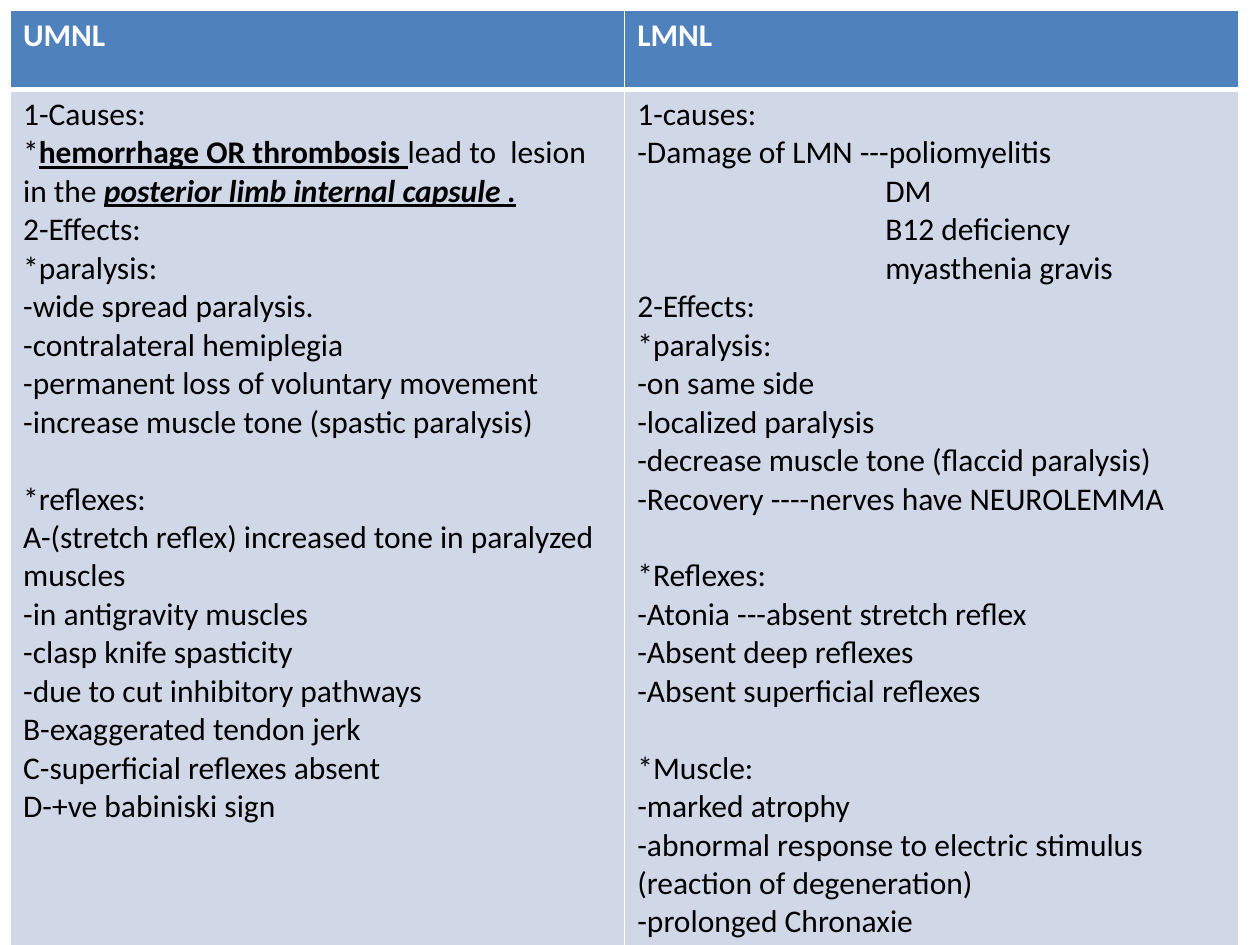
import dataclasses

import lxml.etree
import pptx
import pptx.dml.color
import pptx.oxml.ns
import pptx.util

Pt = pptx.util.Pt


@dataclasses.dataclass(frozen=True)
class Theme:
    font: str = "Calibri"
    size: float = 18
    line_height: float = 22
    header_fill: str = "4F81BD"
    header_text: str = "FFFFFF"
    body_fill: str = "D0D8E8"
    body_text: str = "000000"
    rule: str = "FFFFFF"
    thin: float = 1
    thick: float = 3


@dataclasses.dataclass
class Line:
    runs: list
    space_before: float = 0
    indent: float = 0


THEME = Theme()
PLAIN = {"bold": False}
STRONG = {"bold": True, "underline": True}
STRONG_ITALIC = {**STRONG, "italic": True}


def section(text):
    """A heading set off from the lines above by one line of space."""
    return Line([(text, PLAIN)], space_before=THEME.line_height)


def disease(text):
    """A cause aligned under the first one named."""
    return Line([(text, PLAIN)], indent=141.7)


# Content
UMNL = [
    "1-Causes:",
    Line([
        ("*", PLAIN),
        ("hemorrhage OR thrombosis ", STRONG),
        ("lead to  lesion in the ", PLAIN),
        ("posterior limb internal capsule .", STRONG_ITALIC),
    ]),
    "2-Effects:",
    "*paralysis:",
    "-wide spread paralysis.",
    "-contralateral hemiplegia",
    "-permanent loss of voluntary movement",
    "-increase muscle tone (spastic paralysis)",
    section("*reflexes:"),
    "A-(stretch reflex) increased tone in paralyzed muscles",
    "-in antigravity muscles",
    "-clasp knife spasticity",
    "-due to cut inhibitory pathways",
    "B-exaggerated tendon jerk",
    "C-superficial reflexes absent",
    "D-+ve babiniski sign",
]

LMNL = [
    "1-causes:",
    "-Damage of LMN ---poliomyelitis",
    disease("DM"),
    disease("B12 deficiency"),
    disease("myasthenia gravis"),
    "2-Effects:",
    "*paralysis:",
    "-on same side",
    "-localized paralysis",
    "-decrease muscle tone (flaccid paralysis)",
    "-Recovery ----nerves have NEUROLEMMA",
    section("*Reflexes:"),
    "-Atonia ---absent stretch reflex",
    "-Absent deep reflexes",
    "-Absent superficial reflexes",
    section("*Muscle:"),
    "-marked atrophy",
    "-abnormal response to electric stimulus",
    "(reaction of degeneration)",
    "-prolonged Chronaxie",
]


class SlideBuilder:
    def __init__(self, slide, theme):
        self.slide = slide
        self.theme = theme

    def table(self, left, top, column_widths, row_heights):
        grid = self.slide.shapes.add_table(
            len(row_heights), len(column_widths), Pt(left), Pt(top),
            Pt(sum(column_widths)), Pt(sum(row_heights))).table
        grid.horz_banding = False
        for column, width in zip(grid.columns, column_widths):
            column.width = Pt(width)
        for row, height in zip(grid.rows, row_heights):
            row.height = Pt(height)
        return grid

    def cell(self, cell, lines, fill, color, top, bottom):
        cell.fill.solid()
        cell.fill.fore_color.rgb = pptx.dml.color.RGBColor.from_string(fill)
        self.borders(cell, {"L": self.theme.thin, "R": self.theme.thin,
                            "T": top, "B": bottom})
        for number, line in enumerate(lines):
            if isinstance(line, str):
                line = Line([(line, PLAIN)])
            frame = cell.text_frame
            paragraph = frame.add_paragraph() if number else frame.paragraphs[0]
            self.paragraph(paragraph, line, color)

    def paragraph(self, paragraph, line, color):
        if line.space_before:
            paragraph.space_before = Pt(line.space_before)
        if line.indent:
            paragraph._p.get_or_add_pPr().set("marL", str(Pt(line.indent)))
        for text, style in line.runs:
            run = paragraph.add_run()
            run.text = text
            values = {"name": self.theme.font, "size": Pt(self.theme.size), **style}
            for name, value in values.items():
                setattr(run.font, name, value)
            run.font.color.rgb = pptx.dml.color.RGBColor.from_string(color)

    def borders(self, cell, widths):
        qn = pptx.oxml.ns.qn
        properties = cell._tc.get_or_add_tcPr()
        # Border lines come before the fill in a cell's properties
        for position, (side, width) in enumerate(widths.items()):
            border = lxml.etree.Element(qn(f"a:ln{side}"), w=str(Pt(width)))
            fill = lxml.etree.SubElement(border, qn("a:solidFill"))
            lxml.etree.SubElement(fill, qn("a:srgbClr"), val=self.theme.rule)
            properties.insert(position, border)


def main():
    deck = pptx.Presentation()
    deck.slide_width, deck.slide_height = Pt(720), Pt(540)
    slide = deck.slides.add_slide(deck.slide_layouts[6])
    builder = SlideBuilder(slide, THEME)

    # Comparison table, one column per lesion
    comparison = builder.table(6, 6, [351, 351], [45, 479])
    for column, (lesion, features) in enumerate([("UMNL", UMNL), ("LMNL", LMNL)]):
        builder.cell(comparison.cell(0, column), [Line([(lesion, {"bold": True})])],
                     THEME.header_fill, THEME.header_text, THEME.thin, THEME.thick)
        builder.cell(comparison.cell(1, column), features,
                     THEME.body_fill, THEME.body_text, THEME.thick, THEME.thin)

    deck.save("out.pptx")


if __name__ == "__main__":
    main()
